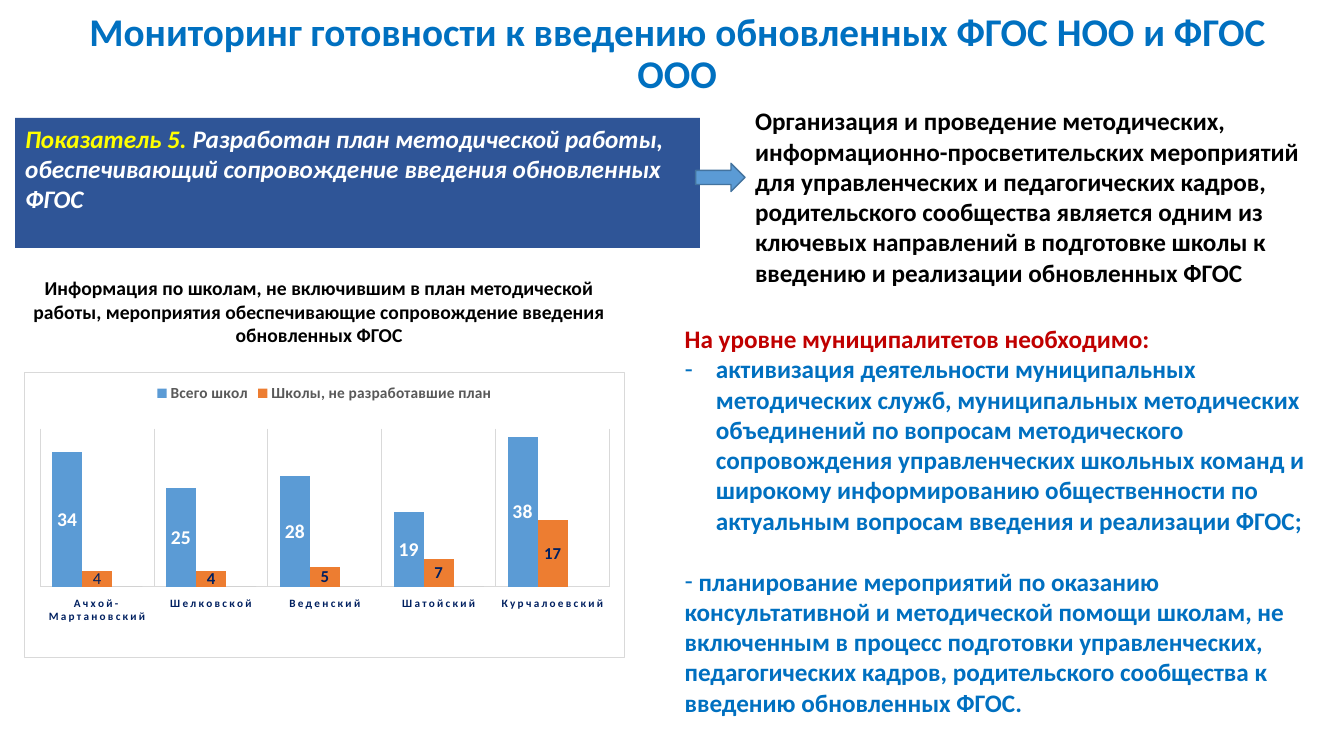
"""Slide on readiness for the updated education standards, with a school chart."""
from pptx import Presentation
from pptx.chart.data import CategoryChartData
from pptx.dml.color import RGBColor
from pptx.enum.chart import XL_CHART_TYPE, XL_LABEL_POSITION, XL_LEGEND_POSITION, XL_TICK_LABEL_POSITION, XL_TICK_MARK
from pptx.enum.shapes import MSO_SHAPE
from pptx.enum.text import MSO_ANCHOR, MSO_AUTO_SIZE, PP_ALIGN
from pptx.oxml import parse_xml
from pptx.oxml.ns import nsdecls
from pptx.util import Inches, Pt


class Theme:
    font = "Calibri"
    blue, red, black = "0070C0", "C00000", "000000"
    banner, yellow, white = "2F5597", "FFFF00", "FFFFFF"
    arrow, arrow_line = "5B9BD5", "43739E"
    bars = "5B9BD5", "ED7D31", "A5A5A5"
    navy, grey, rule = "002060", "595959", "D9D9D9"
    title, body, caption = 28, 18, 14
    chart, legend, axis, total_label, missing_label = 10, 11, 8, 14, 12


def box(x, y, w, h):
    return (int(prs.slide_width * x / 100), int(prs.slide_height * y / 100),
            int(prs.slide_width * w / 100), int(prs.slide_height * h / 100))


def style(font, size, color, bold=True, italic=False):
    font.name, font.size, font.bold, font.italic = Theme.font, Pt(size), bold, italic
    font.color.rgb = RGBColor.from_string(color)


prs = Presentation()
prs.slide_width, prs.slide_height = Inches(13.33), Inches(7.5)
s = prs.slides.add_slide(prs.slide_layouts[1])
title, tasks = s.placeholders

banner = s.shapes.add_shape(MSO_SHAPE.RECTANGLE, *box(1.13, 15.6, 50.94, 17.2))
arrow = s.shapes.add_shape(MSO_SHAPE.RIGHT_ARROW, *box(51.76, 21.6, 3.68, 3.73))
for shp, fill in (banner, Theme.banner), (arrow, Theme.arrow):
    shp.shadow.inherit = False
    shp.fill.solid()
    shp.fill.fore_color.rgb = RGBColor.from_string(fill)
banner.line.fill.background()
arrow.line.color.rgb = RGBColor.from_string(Theme.arrow_line)
arrow.line.width = Pt(1)

caption = s.shapes.add_textbox(*box(1.2, 35.87, 45.09, 10.8))
summary = s.shapes.add_textbox(*box(55.44, 13.33, 43.36, 29.6))
title.left, title.top, title.width, title.height = box(2.93, 2.13, 94.9, 10.27)
tasks.left, tasks.top, tasks.width, tasks.height = box(50.19, 42.13, 47.64, 54.5)

texts = [
    (title, Theme.title, PP_ALIGN.CENTER, [
        [("Мониторинг готовности к введению обновленных ФГОС НОО и ФГОС ООО", Theme.blue)]]),
    (banner, Theme.body, PP_ALIGN.LEFT, [
        [("Показатель 5. ", Theme.yellow),
         ("Разработан план методической работы, обеспечивающий сопровождение "
          "введения обновленных ФГОС", Theme.white)]]),
    (caption, Theme.caption, PP_ALIGN.CENTER, [
        [("Информация по школам, не включившим в план методической работы, мероприятия "
          "обеспечивающие сопровождение введения обновленных ФГОС", Theme.black)]]),
    (summary, Theme.body, PP_ALIGN.LEFT, [
        [("Организация и проведение методических, информационно-просветительских мероприятий "
          "для управленческих и педагогических кадров, родительского сообщества является одним "
          "из ключевых направлений в подготовке школы к введению и реализации обновленных ФГОС",
          Theme.black)]]),
    (tasks, Theme.body, PP_ALIGN.LEFT, [
        [("На уровне муниципалитетов необходимо:", Theme.red)],
        [("активизация деятельности муниципальных методических служб, муниципальных методических "
          "объединений по вопросам методического сопровождения управленческих школьных команд и "
          "широкому информированию общественности по актуальным вопросам введения и реализации "
          "ФГОС;", Theme.blue)],
        [(" планирование мероприятий по оказанию консультативной и методической помощи школам, не "
          "включенным в процесс подготовки управленческих, педагогических кадров, родительского "
          "сообщества к введению обновленных ФГОС.", Theme.blue)]]),
]
for shp, size, align, paragraphs in texts:
    tf = shp.text_frame
    tf.word_wrap, tf.auto_size = True, MSO_AUTO_SIZE.NONE
    tf.vertical_anchor = MSO_ANCHOR.MIDDLE if shp is title else MSO_ANCHOR.TOP
    for i, runs in enumerate(paragraphs):
        p = tf.add_paragraph() if i else tf.paragraphs[0]
        p.alignment, p.space_before = align, Pt(0)
        for text, color in runs:
            r = p.add_run()
            r.text = text
            style(r.font, size, color, italic=shp is banner)
title.text_frame.paragraphs[0].line_spacing = 0.9

heading, activity, planning = tasks.text_frame.paragraphs
planning.space_before = Pt(22)
for p, indent, bullet in (heading, 0, None), (activity, 0.31, "-"), (planning, 0, "-"):
    pPr = p._p.get_or_add_pPr()
    pPr.set("marL", str(Inches(indent)))
    pPr.set("indent", str(-Inches(indent)))
    tag = f'buChar {nsdecls("a")} char="{bullet}"' if bullet else f'buNone {nsdecls("a")}'
    pPr.append(parse_xml(f"<a:{tag}/>"))

data = CategoryChartData()
data.categories = ["Ачхой-Мартановский", "Шелковской", "Веденский", "Шатойский", "Курчалоевский"]
data.add_series("Всего школ", (34, 25, 28, 19, 38))
data.add_series("Школы, не разработавшие план", (4, 4, 5, 7, 17))
data.add_series("Series 3", (0, 0, 0, 0, None))
chart = s.shapes.add_chart(XL_CHART_TYPE.COLUMN_CLUSTERED, *box(1.8, 49.2, 44.71, 37.87), data).chart
chart.has_title = False
style(chart.font, Theme.chart, Theme.black, bold=False)
chart.has_legend = True
chart.legend.position = XL_LEGEND_POSITION.TOP
chart.legend.include_in_layout = False
style(chart.legend.font, Theme.legend, Theme.grey)
chart.legend._element.insert(1, parse_xml(
    f'<c:legendEntry {nsdecls("c")}><c:idx val="2"/><c:delete val="1"/></c:legendEntry>'))

plot = chart.plots[0]
plot.gap_width, plot.overlap, plot.vary_by_categories = 79, 0, False
for series, color in zip(plot.series, Theme.bars):
    series.format.fill.solid()
    series.format.fill.fore_color.rgb = RGBColor.from_string(color)
total, missing = plot.series[0], plot.series[1]
for series, size, color in (total, Theme.total_label, Theme.white), (missing, Theme.missing_label, Theme.navy):
    series.data_labels.show_value = True
    series.data_labels.position = XL_LABEL_POSITION.CENTER
    style(series.data_labels.font, size, color)
first = missing.points[0].data_label
style(first.font, Theme.missing_label, Theme.navy, bold=False)
first.position = XL_LABEL_POSITION.CENTER

values, districts = chart.value_axis, chart.category_axis
values.minimum_scale, values.maximum_scale = 0, 40
values.has_major_gridlines = values.visible = False
districts.has_major_gridlines = True
districts.major_tick_mark = XL_TICK_MARK.NONE
districts.tick_label_position = XL_TICK_LABEL_POSITION.LOW
style(districts.tick_labels.font, Theme.axis, Theme.navy)
districts.tick_labels.font._element.set("spc", "150")
for line in districts.format.line, districts.major_gridlines.format.line:
    line.color.rgb = RGBColor.from_string(Theme.rule)
    line.width = Pt(0.75)

area = chart._chartSpace.chart.plotArea
for layout in area.findall("{*}layout"):
    area.remove(layout)
frame = "".join(f'<c:{k} val="{v}"/>' for k, v in (
    ("layoutTarget", "inner"), ("xMode", "edge"), ("yMode", "edge"),
    ("x", 0.026), ("y", 0.197), ("w", 0.949), ("h", 0.555)))
area.insert(0, parse_xml(
    f'<c:layout {nsdecls("c")}><c:manualLayout>{frame}</c:manualLayout></c:layout>'))
chart._chartSpace.find("{*}txPr").addprevious(parse_xml(
    f'<c:spPr {nsdecls("c", "a")}><a:solidFill><a:srgbClr val="{Theme.white}"/></a:solidFill>'
    f'<a:ln w="{Pt(0.75)}"><a:solidFill><a:srgbClr val="{Theme.rule}"/></a:solidFill></a:ln></c:spPr>'))

prs.save("out.pptx")
